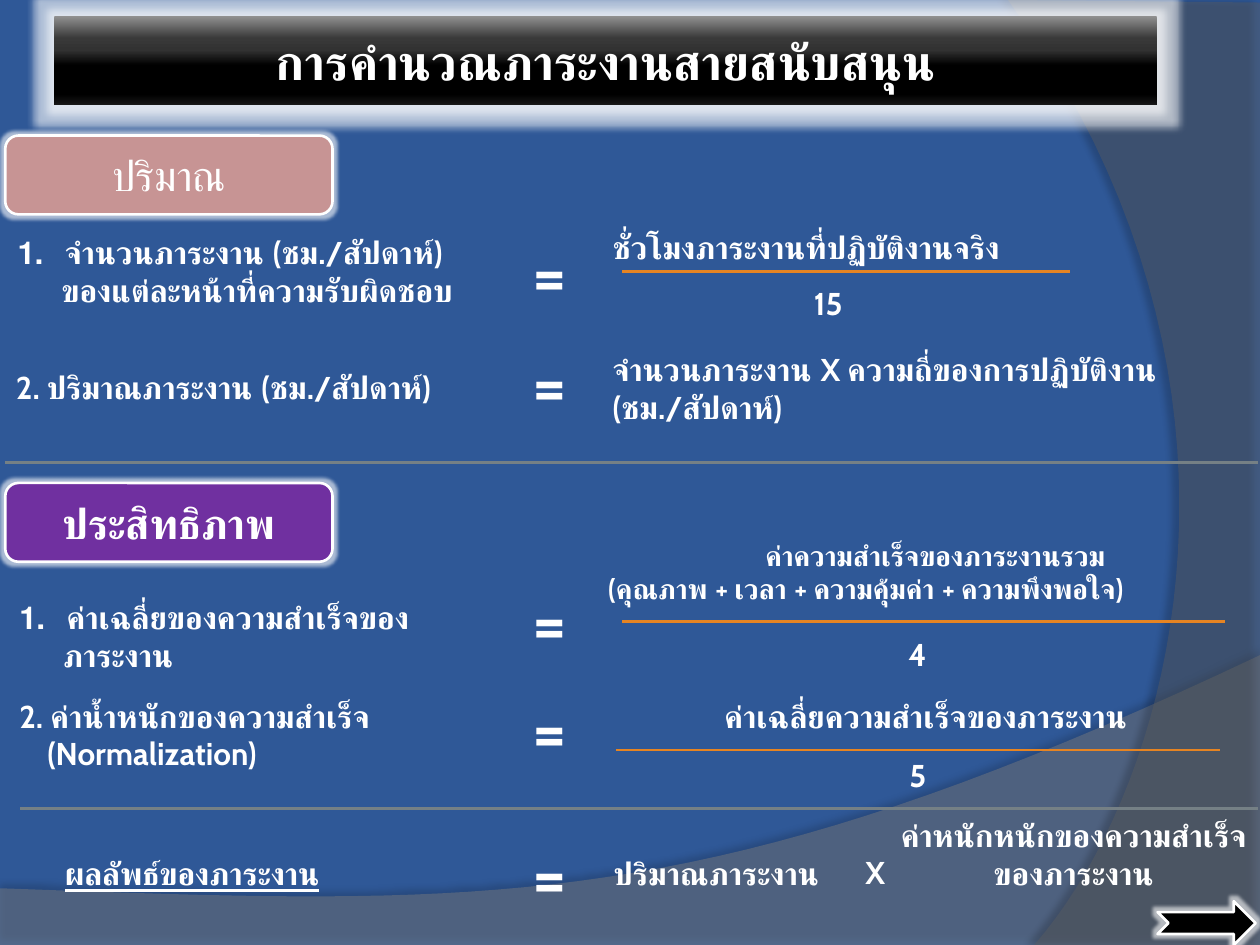
import pptx
import pptx.util
import pptx.dml.color
import pptx.enum.shapes
import pptx.enum.text
import pptx.oxml
import pptx.oxml.ns
from lxml import etree

Pt = pptx.util.Pt
RGB = pptx.dml.color.RGBColor.from_string
qn = pptx.oxml.ns.qn
Kind = pptx.enum.shapes.MSO_SHAPE
Align = pptx.enum.text.PP_ALIGN
Anchor = pptx.enum.text.MSO_ANCHOR

theme = {
    "font": "Cabin", "back": "2F5897", "text": "FFFFFF", "edge": "FFFFFF",
    "wave": "7F7F7F", "side": "5E5E5E", "rule": "758085", "bar": "E68422",
    "rose": "C79494", "plum": "7030A0", "dark": "000000",
    "fade": [(0, "909090"), (25, "393939"), (38, "323232"), (55, "000000"),
             (88, "000000"), (100, "181818")],
    "title": 28, "head": 24, "body": 18, "small": 16, "sign": 40,
}


def write(frame, lines, size, bold=True, under=False):
    for i, (words, align, indent, mark) in enumerate(lines):
        para = frame.paragraphs[0] if i == 0 else frame.add_paragraph()
        para.alignment = align
        run = para.add_run()
        run.text = words
        run.font.name = theme["font"]
        run.font.size = Pt(size)
        run.font.bold = bold
        run.font.underline = under
        run.font.color.rgb = RGB(theme["text"])
        props = para._p.get_or_add_pPr()
        if indent:
            props.set("marL", str(Pt(indent)))
        if mark:
            props.set("indent", str(-Pt(indent)))
            etree.SubElement(props, qn("a:buFont"), typeface=theme["font"])
            etree.SubElement(props, qn("a:buAutoNum"), type="arabicPeriod")


def effect(shape, tag, color, alpha, **sizes):
    shape.shadow.inherit = False
    holder = shape._element.spPr.find(qn("a:effectLst"))
    node = etree.SubElement(holder, qn(tag), {k: str(v) for k, v in sizes.items()})
    tint = etree.SubElement(node, qn("a:srgbClr"), val=color)
    etree.SubElement(tint, qn("a:alpha"), val=str(alpha * 1000))


deck = pptx.Presentation()
deck.slide_width, deck.slide_height = Pt(720), Pt(540)
slide = deck.slides.add_slide(deck.slide_layouts[6])
slide.background.fill.solid()
slide.background.fill.fore_color.rgb = RGB(theme["back"])
shapes = slide.shapes

swoops = [
    ([(0, 507.6), (0, 540), (720, 540)],
     [(720, 374.4), (402.5, 525), (281.5, 517.7), (0, 507.6)], "wave", 45, 35, 3.5, 270),
    ([(720, 1.5), (720, 540)],
     [(591, 540), (673, 445.7), (733, 216), (576, 0)], "side", 40, 45, 4, 180),
]
for edge, curve, color, alpha, shade, dist, turn in swoops:
    points = list(edge)
    for step in range(41):
        t = step / 40
        parts = [(1 - t) ** 3, 3 * t * (1 - t) ** 2, 3 * t * t * (1 - t), t ** 3]
        points.append(tuple(sum(w * p[a] for w, p in zip(parts, curve)) for a in (0, 1)))
    pen = shapes.build_freeform(Pt(points[0][0]), Pt(points[0][1]))
    pen.add_line_segments([(Pt(x), Pt(y)) for x, y in points[1:]], close=True)
    swoop = pen.convert_to_shape()
    swoop.fill.solid()
    swoop.fill.fore_color.rgb = RGB(theme[color])
    swoop.line.fill.background()
    tint = swoop._element.spPr.find(qn("a:solidFill"))[0]
    etree.SubElement(tint, qn("a:alpha"), val=str(alpha * 1000))
    effect(swoop, "a:outerShdw", theme["dark"], shade,
           blurRad=Pt(4), dist=Pt(dist), dir=turn * 60000)

title = shapes.add_shape(Kind.RECTANGLE, Pt(31), Pt(9.2), Pt(630), Pt(51))
title.fill.gradient()
title.fill.gradient_angle = 270
stops = title._element.spPr.find(qn("a:gradFill")).find(qn("a:gsLst"))
for stop in list(stops):
    stops.remove(stop)
for place, color in theme["fade"]:
    stop = etree.SubElement(stops, qn("a:gs"), pos=str(place * 1000))
    etree.SubElement(stop, qn("a:srgbClr"), val=color)
title.line.fill.background()
effect(title, "a:glow", theme["edge"], 60, rad=Pt(9))
title.text_frame.vertical_anchor = Anchor.MIDDLE
write(title.text_frame, [("การคำนวณภาระงานสายสนับสนุน", Align.CENTER, 0, False)], theme["title"])

badges = [
    (Kind.ROUNDED_RECTANGLE, 3, 77.5, 187, 45, "rose", "ปริมาณ", False),
    (Kind.ROUNDED_RECTANGLE, 3, 276, 187, 45, "plum", "ประสิทธิภาพ", True),
    (Kind.NOTCHED_RIGHT_ARROW, 661.5, 515, 56, 25, "dark", "", False),
]
for kind, x, y, w, h, color, words, bold in badges:
    badge = shapes.add_shape(kind, Pt(x), Pt(y), Pt(w), Pt(h))
    badge.fill.solid()
    badge.fill.fore_color.rgb = RGB(theme[color])
    badge.line.color.rgb = RGB(theme["edge"])
    badge.line.width = Pt(1.5)
    effect(badge, "a:glow", theme["edge"], 60, rad=Pt(4))
    if words:
        badge.text_frame.vertical_anchor = Anchor.MIDDLE
        write(badge.text_frame, [(words, Align.CENTER, 0, False)], theme["head"], bold)

rules = [
    (3, 719, 264.2, "rule"), (11.5, 719, 462, "rule"),
    (355.5, 611.5, 155.2, "bar"), (355.5, 700, 355, "bar"), (352, 697, 428.5, "bar"),
]
for left, right, y, color in rules:
    rule = shapes.add_connector(pptx.enum.shapes.MSO_CONNECTOR.STRAIGHT,
                                Pt(left), Pt(y), Pt(right), Pt(y))
    rule.line.color.rgb = RGB(theme[color])
    rule.line.width = Pt(1.5)
    etree.SubElement(rule._element.spPr, qn("a:effectLst"))

L, C = Align.LEFT, Align.CENTER
notes = [
    (3, 129.5, 376, 51, "body", [("จำนวนภาระงาน (ชม./สัปดาห์)", L, 27, True),
                                 ("ของแต่ละหน้าที่ความรับผิดชอบ", L, 25, False)]),
    (343, 126.7, 376, 29, "body", [("ชั่วโมงภาระงานที่ปฏิบัติงานจริง", L, 0, False)]),
    (458, 159, 51, 58, "body", [("15", L, 0, False)]),
    (2, 206.6, 315, 29, "body", [("2. ปริมาณภาระงาน (ชม./สัปดาห์)", L, 0, False)]),
    (343, 196.5, 376, 51, "body", [("จำนวนภาระงาน X ความถี่ของการปฏิบัติงาน", L, 0, False),
                                   ("(ชม./สัปดาห์)", L, 0, False)]),
    (4, 338.4, 333, 51, "body", [("ค่าเฉลี่ยของความสำเร็จของ", L, 27, True),
                                 ("ภาระงาน", L, 25, False)]),
    (340.5, 304, 388, 46, "small", [("ค่าความสำเร็จของภาระงานรวม", C, 0, False),
                                    ("(คุณภาพ + เวลา + ความคุ้มค่า + ความพึงพอใจ)", L, 0, False)]),
    (512, 359.3, 51, 58, "body", [("4", L, 0, False)]),
    (4, 394.5, 333, 51, "body", [("2. ค่าน้ำหนักของความสำเร็จ", L, 0, False),
                                 ("(Normalization)", L, 16, False)]),
    (335, 394.5, 388, 51, "body", [("ค่าเฉลี่ยความสำเร็จของภาระงาน", C, 0, False)]),
    (512.6, 428.4, 51, 58, "body", [("5", L, 0, False)]),
    (343.5, 484.5, 158, 29, "body", [("ปริมาณภาระงาน", L, 0, False)]),
    (504, 463, 219, 51, "body", [("ค่าหนักหนักของความสำเร็จของภาระงาน", C, 0, False)]),
    (30, 484.5, 333, 29, "body", [("ผลลัพธ์ของภาระงาน", L, 0, False)]),
    (487.4, 484, 26, 58, "body", [("X", L, 0, False)]),
]
for y in (128.2, 190.8, 326.9, 388.8, 472.3):
    notes.append((297, y, 47, 85, "sign", [("=", L, 0, False)]))
for x, y, w, h, size, lines in notes:
    note = shapes.add_textbox(Pt(x), Pt(y), Pt(w), Pt(h))
    note.text_frame.word_wrap = True
    write(note.text_frame, lines, theme[size], under=lines[0][0] == "ผลลัพธ์ของภาระงาน")

deck.save("out.pptx")
